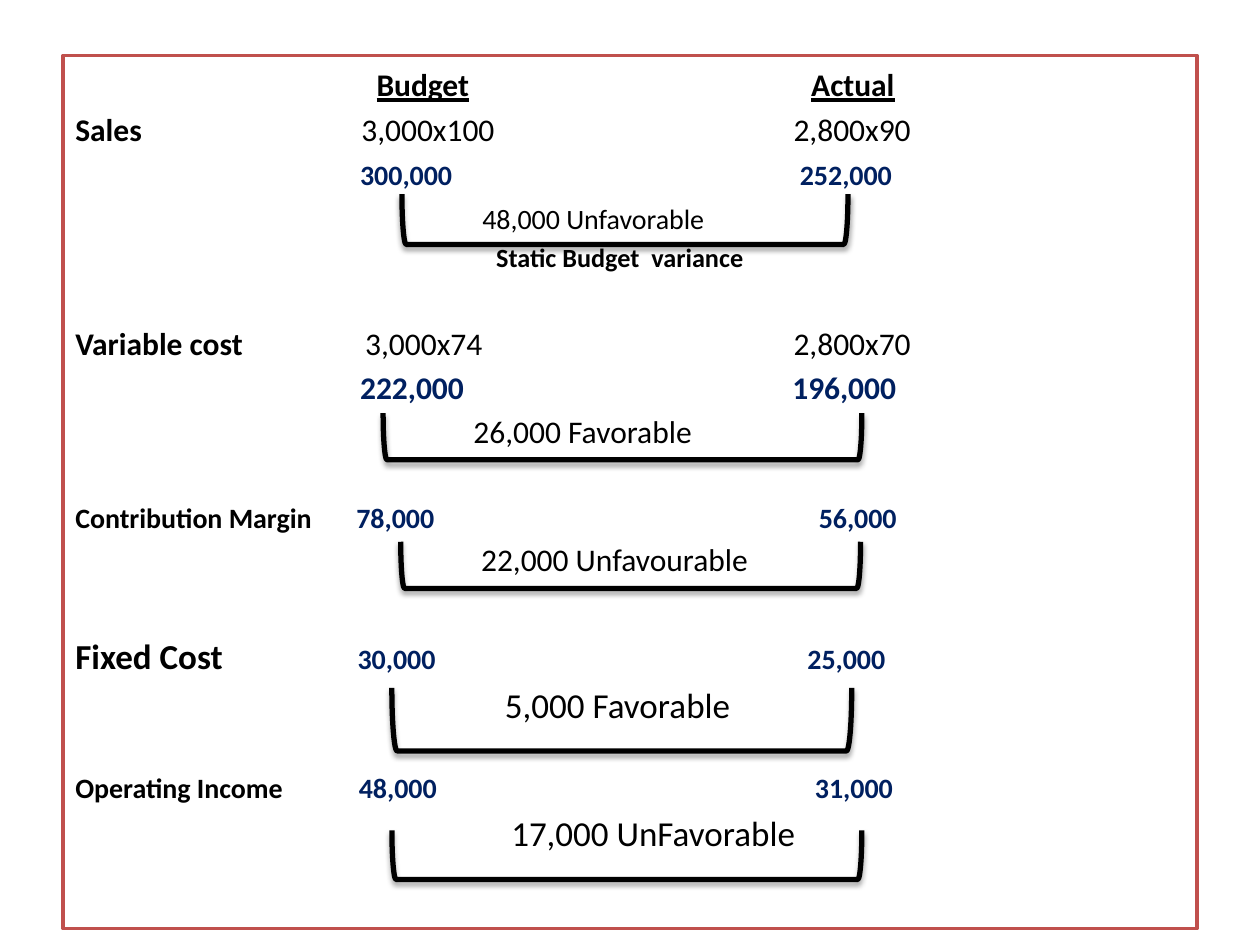
import pptx
import pptx.util
import pptx.dml.color
import pptx.enum.shapes
import pptx.enum.text
import pptx.oxml
import pptx.oxml.ns

Inches, Pt = pptx.util.Inches, pptx.util.Pt
RGB = pptx.dml.color.RGBColor.from_string

THEME = {
    "font": "Calibri", "paper": "FFFFFF", "frame": "C0504D", "ink": "000000",
    "frame_width": 2, "bracket_width": 3,
    "large": 20, "normal": 18, "small": 16, "caption": 15,
}
# style: (bold, underline, colour)
STYLES = {
    "heading": (True, True, "000000"),
    "label": (True, False, "000000"),
    "plain": (False, False, "000000"),
    "total": (True, False, "002060"),
}
FRAME = (0.5, 0.44, 9, 6.93)
TEXT_LEFT = FRAME[0] + 0.1
LINE_HEIGHT, SPACE_SHARE = 1.22, 0.2

# (line size, size of the empty line above or None, cells); cell: (x, text, style, size)
ROWS = [
    ("large", None, [(2.99, "Budget", "heading", "normal"),
                     (6.44, "Actual", "heading", "normal")]),
    ("normal", None, [(TEXT_LEFT, "Sales", "label", "normal"),
                      (2.87, "3,000x100", "plain", "normal"),
                      (6.3, "2,800x90", "plain", "normal")]),
    ("normal", None, [(2.86, "300,000", "total", "small"),
                      (6.35, "252,000", "total", "small")]),
    ("normal", None, [(3.83, "48,000 Unfavorable", "plain", "small")]),
    ("caption", None, [(3.94, "Static Budget  variance", "label", "caption")]),
    ("normal", "normal", [(TEXT_LEFT, "Variable cost", "label", "normal"),
                          (2.9, "3,000x74", "plain", "normal"),
                          (6.3, "2,800x70", "plain", "normal")]),
    ("normal", None, [(2.86, "222,000", "total", "normal"),
                      (6.29, "196,000", "total", "normal")]),
    ("normal", None, [(3.76, "26,000 Favorable", "plain", "normal")]),
    ("small", "normal", [(TEXT_LEFT, "Contribution Margin", "label", "small"),
                         (2.83, "78,000", "total", "small"),
                         (6.5, "56,000", "total", "small")]),
    ("normal", None, [(3.82, "22,000 Unfavourable", "plain", "normal")]),
    ("large", "large", [(TEXT_LEFT, "Fixed Cost", "label", "large"),
                        (2.84, "30,000", "total", "small"),
                        (6.41, "25,000", "total", "small")]),
    ("large", None, [(4.01, "5,000 Favorable", "plain", "large")]),
    ("small", "small", [(TEXT_LEFT, "Operating Income", "label", "small"),
                        (2.85, "48,000", "total", "small"),
                        (6.47, "31,000", "total", "small")]),
    ("large", None, [(4.06, "17,000 UnFavorable", "plain", "large")]),
]
HEADING_RULE_END = 7.27  # the underline of the last heading runs on to here

# left, top, span, depth
BRACKETS = [
    (3.19, 1.54, 3.54, 0.4),
    (3.04, 3.28, 3.8, 0.37),
    (3.18, 4.3, 3.65, 0.37),
    (3.11, 5.46, 3.65, 0.5),
    (3.11, 6.59, 3.73, 0.39),
]


def add_span(para, text, style, size):
    bold, underline, colour = STYLES[style]
    span = para.add_run()
    span.text = text
    font = span.font
    font.name, font.size = THEME["font"], Pt(THEME[size])
    font.bold, font.underline = bold, underline
    font.color.rgb = RGB(colour)


def set_tabs(para, positions):
    properties = para._p.get_or_add_pPr()
    tabs = pptx.oxml.parse_xml(
        f'<a:tabLst {pptx.oxml.ns.nsdecls("a")}>'
        + "".join(f'<a:tab pos="{Inches(x - TEXT_LEFT)}" algn="l"/>' for x in positions)
        + "</a:tabLst>")
    properties.append(tabs)


def fill_row(para, line_size, gap_size, cells):
    para.alignment = pptx.enum.text.PP_ALIGN.LEFT
    space = SPACE_SHARE * THEME[line_size]
    if gap_size:
        space += (LINE_HEIGHT + SPACE_SHARE) * THEME[gap_size]
    para.space_before = Pt(round(space, 1))
    stops = [x for x, *_ in cells if x > TEXT_LEFT]
    for x, text, style, size in cells:
        if x > TEXT_LEFT:
            add_span(para, "\t", "plain", line_size)
        add_span(para, text, style, size)
    if cells[-1][2] == "heading":
        stops.append(HEADING_RULE_END)
        add_span(para, "\t", "heading", "normal")
    set_tabs(para, stops)


def add_statement(page):
    box = page.shapes.add_shape(pptx.enum.shapes.MSO_SHAPE.RECTANGLE, *map(Inches, FRAME))
    box.shadow.inherit = False
    box.fill.solid()
    box.fill.fore_color.rgb = RGB(THEME["paper"])
    box.line.color.rgb = RGB(THEME["frame"])
    box.line.width = Pt(THEME["frame_width"])
    frame = box.text_frame
    frame.word_wrap = True
    frame.vertical_anchor = pptx.enum.text.MSO_ANCHOR.TOP
    for index, row in enumerate(ROWS):
        fill_row(frame.add_paragraph() if index else frame.paragraphs[0], *row)


def add_bracket(page, left, top, span, depth):
    """Draw a bracket that opens upwards: a right bracket turned a quarter."""
    box = page.shapes.add_shape(
        pptx.enum.shapes.MSO_SHAPE.RIGHT_BRACKET,
        Inches(left + (span - depth) / 2), Inches(top + (depth - span) / 2),
        Inches(depth), Inches(span))
    box.rotation = 90
    box.fill.background()
    box.line.color.rgb = RGB(THEME["ink"])
    box.line.width = Pt(THEME["bracket_width"])
    box.shadow.inherit = False
    effects = box._element.spPr.find(pptx.oxml.ns.qn("a:effectLst"))
    effects.append(pptx.oxml.parse_xml(
        f'<a:outerShdw {pptx.oxml.ns.nsdecls("a")} blurRad="{Pt(3.1)}" dist="{Pt(1.8)}" '
        f'dir="5400000" rotWithShape="0"><a:srgbClr val="{THEME["ink"]}">'
        '<a:alpha val="35000"/></a:srgbClr></a:outerShdw>'))


def main():
    deck = pptx.Presentation()
    deck.slide_width, deck.slide_height = Inches(10), Inches(7.5)
    page = deck.slides.add_slide(deck.slide_layouts[6])
    add_statement(page)
    for bracket in BRACKETS:
        add_bracket(page, *bracket)
    deck.save("out.pptx")


if __name__ == "__main__":
    main()
